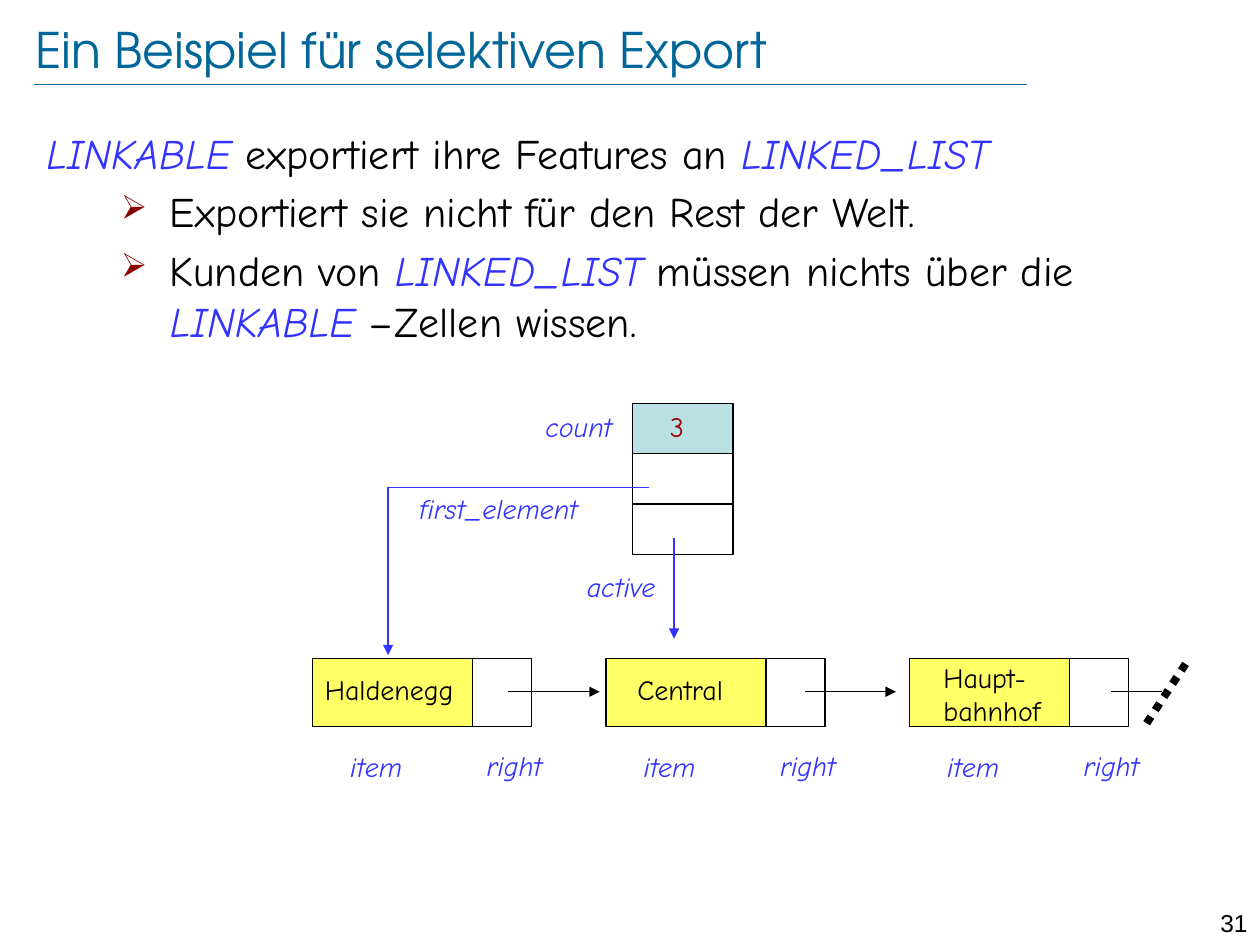
from lxml.etree import SubElement
from pptx import Presentation
from pptx.dml.color import RGBColor
from pptx.enum.dml import MSO_LINE
from pptx.enum.shapes import MSO_CONNECTOR, MSO_SHAPE
from pptx.enum.text import MSO_ANCHOR, PP_ALIGN
from pptx.oxml.ns import qn
from pptx.util import Pt

COLORS = {
    "black": "000000",
    "title": "006699",
    "feature": "3333FF",
    "bullet": "8B0000",
    "value": "990000",
    "item": "FFFF66",
    "count": "BBE0E3",
}
BODY_FONT = "Comic Neue"
CELL_TOP, CELL_H = 376.5, 38.9
ITEM_W, RIGHT_W = 91.4, 33.8
FIELD_X, FIELD_Y, FIELD_W, FIELD_H = 361.4, 230.4, 57.6, 28.8


def rgb(name):
    return RGBColor.from_string(COLORS[name])


def add_run(p, text, size, font=BODY_FONT, color="black", italic=False):
    for i, part in enumerate(text.split("\n")):
        if i:
            p.add_line_break()
        r = p.add_run()
        r.text = part
        r.font.size = Pt(size)
        r.font.name = font
        r.font.italic = italic
        r.font.color.rgb = rgb(color)


def add_box(s, x, y, w, h, inset=None):
    tf = s.shapes.add_textbox(Pt(x), Pt(y), Pt(w), Pt(h)).text_frame
    tf.word_wrap = True
    if inset is not None:
        tf.margin_left = tf.margin_right = Pt(inset)
        tf.margin_top = tf.margin_bottom = Pt(inset)
    return tf


def add_text(s, text, x, y, w, h, size=16, align=PP_ALIGN.LEFT,
             anchor=MSO_ANCHOR.TOP, inset=None, **fmt):
    tf = add_box(s, x, y, w, h, inset)
    tf.vertical_anchor = anchor
    p = tf.paragraphs[0]
    p.alignment = align
    add_run(p, text, size, **fmt)


def add_label(s, text, x, y, w):
    add_text(s, text, x, y, w, 26.6, color="feature", italic=True)


def add_bullet(p):
    pPr = p._p.get_or_add_pPr()
    pPr.set("marL", str(Pt(70.6)))
    pPr.set("indent", str(Pt(-28)))
    clr = SubElement(pPr, qn("a:buClr"))
    SubElement(clr, qn("a:srgbClr")).set("val", COLORS["bullet"])
    SubElement(pPr, qn("a:buSzPct")).set("val", "80000")
    SubElement(pPr, qn("a:buChar")).set("char", "➢")


def add_body(s):
    tf = add_box(s, 19.4, 69.1, 676.8, 444.2)
    paragraphs = [
        ["LINKABLE", " exportiert ihre Features an ", "LINKED_LIST"],
        ["Exportiert sie nicht für den Rest der Welt."],
        ["Kunden von ", "LINKED_LIST", " müssen nichts über die ",
         "LINKABLE", " –Zellen wissen."],
    ]
    for i, runs in enumerate(paragraphs):
        p = tf.add_paragraph() if i else tf.paragraphs[0]
        if i:
            p.space_before = Pt(4.8)
            add_bullet(p)
        for text in runs:
            name = text.isupper()
            add_run(p, text, 24, color="feature" if name else "black", italic=name)


def add_rect(s, x, y, w, h, fill=None):
    sp = s.shapes.add_shape(MSO_SHAPE.RECTANGLE, Pt(x), Pt(y), Pt(w), Pt(h))
    sp.shadow.inherit = False
    if fill:
        sp.fill.solid()
        sp.fill.fore_color.rgb = rgb(fill)
    else:
        sp.fill.background()
    sp.line.color.rgb = rgb("black")
    sp.line.width = Pt(0.75)


def add_line(s, x1, y1, x2, y2, color="black", width=0.75, arrow=False, dash=None):
    c = s.shapes.add_connector(MSO_CONNECTOR.STRAIGHT, Pt(x1), Pt(y1), Pt(x2), Pt(y2))
    c.line.color.rgb = rgb(color)
    c.line.width = Pt(width)
    if dash:
        c.line.dash_style = dash
    if arrow:
        SubElement(c.line._get_or_add_ln(), qn("a:tailEnd")).set("type", "triangle")
    SubElement(c._element.spPr, qn("a:effectLst"))


def add_cell(s, x, text, text_dx, text_y, link_start, link_end, arrow):
    add_rect(s, x, CELL_TOP, ITEM_W, CELL_H, "item")
    add_rect(s, x + ITEM_W, CELL_TOP, RIGHT_W, CELL_H)
    add_text(s, text, x + text_dx, text_y, 96.5, 26.6)
    add_label(s, "item", x + 14.4, 424.6, 48.2)
    add_label(s, "right", x + 92.4, 424, 65)
    add_line(s, link_start, 395.3, link_end, 395.3, arrow=arrow)


def add_list_object(s):
    for i, fill in enumerate(["count", None, None]):
        add_rect(s, FIELD_X, FIELD_Y + i * FIELD_H, FIELD_W, FIELD_H, fill)
    add_text(s, "3", 375.8, FIELD_Y, 62.6, 26.6, color="value")
    add_label(s, "count", 304.6, FIELD_Y, 62.6)
    add_label(s, "first_element", 232.6, 277.2, 168.5)
    add_label(s, "active", 328.3, 321.8, 62.6)
    add_line(s, 370.8, 278.4, 221.8, 278.4, color="feature")
    add_line(s, 221.8, 278.4, 221.8, 374.4, color="feature", arrow=True)
    add_line(s, 385.2, 307.4, 385.2, 365, color="feature", arrow=True)


def main():
    prs = Presentation()
    prs.slide_width, prs.slide_height = Pt(720), Pt(540)
    s = prs.slides.add_slide(prs.slide_layouts[6])

    add_line(s, 19.4, 48.2, 586.8, 48.2, color="title", width=0.25)
    add_text(s, "31", 680.4, 515.5, 39.6, 17.3, size=14, font="Arial",
             align=PP_ALIGN.RIGHT)
    add_text(s, "Ein Beispiel für selektiven Export", 20.2, 9.4, 622.8, 36.7,
             size=28, font="TeX Gyre Adventor", color="title",
             anchor=MSO_ANCHOR.MIDDLE, inset=0)
    add_body(s)

    add_list_object(s)
    add_cell(s, 178.6, "Haldenegg", 0, 380.9, 290.2, 342.7, True)
    add_cell(s, 346.3, "Central", 10.8, 380.9, 460.1, 511.9, True)
    add_cell(s, 519.8, "Haupt-\nbahnhof", 12.2, 373.7, 635, 663.8, False)
    add_line(s, 677.5, 379.4, 655.2, 413.3, width=4.5, dash=MSO_LINE.ROUND_DOT)
    prs.save("out.pptx")


if __name__ == "__main__":
    main()
